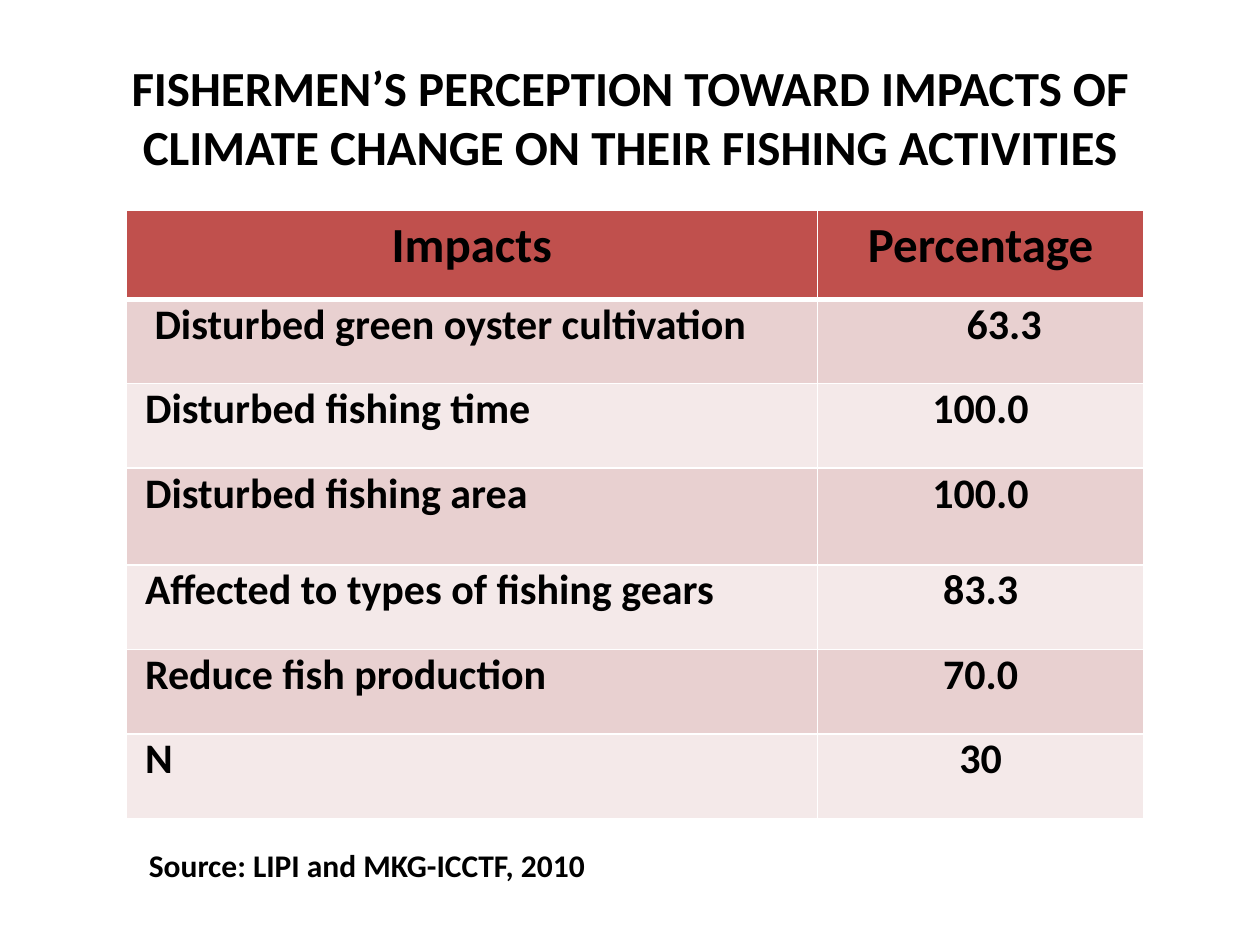
from lxml import etree
from pptx import Presentation
from pptx import util as u
from pptx.dml.color import RGBColor
from pptx.enum import text
from pptx.oxml import ns

Pt = u.Pt
BLACK, WHITE, RED = "000000", "FFFFFF", "C0504D"
BANDS = ["E8D0D0", "F4E9E9"]
LEFT, CENTER = text.PP_ALIGN.LEFT, text.PP_ALIGN.CENTER


def write(frame, words, size, alignment):
    frame.text = words
    paragraph = frame.paragraphs[0]
    paragraph.alignment = alignment
    font = paragraph.runs[0].font
    for name, value in {"name": "Calibri", "size": Pt(size), "bold": True}.items():
        setattr(font, name, value)
    font.color.rgb = RGBColor.from_string(BLACK)


def add_border(cell, side, width):
    """Draw one white cell border; call before the cell's fill is set."""
    properties = cell._tc.get_or_add_tcPr()
    line = etree.SubElement(properties, ns.qn(f"a:ln{side}"), w=str(Pt(width)))
    fill = etree.SubElement(line, ns.qn("a:solidFill"))
    etree.SubElement(fill, ns.qn("a:srgbClr"), val=WHITE)


presentation = Presentation()
presentation.slide_width, presentation.slide_height = Pt(720), Pt(540)
slide = presentation.slides.add_slide(presentation.slide_layouts[5])

# Title
title = slide.shapes.title
title.left, title.top, title.width, title.height = Pt(36), Pt(21.6), Pt(648), Pt(90)
title.text_frame.vertical_anchor = text.MSO_ANCHOR.MIDDLE
write(title.text_frame,
      "FISHERMEN’S PERCEPTION TOWARD IMPACTS OF CLIMATE CHANGE ON THEIR FISHING ACTIVITIES",
      28, CENTER)

# Impacts table
impacts = [
    ("Impacts", "Percentage"),
    ("Disturbed green oyster cultivation", "63.3"),
    ("Disturbed fishing time", "100.0"),
    ("Disturbed fishing area", "100.0"),
    ("Affected to types of fishing gears", "83.3"),
    ("Reduce fish production", "70.0"),
    ("N", "30"),
]
column_widths = [395.2, 186.4]
row_heights = [51, 48.3, 48.3, 55.4, 48.3, 48.3, 48.3]
indents = {(1, 0): 16.3, (1, 1): 27}

table = slide.shapes.add_table(len(impacts), 2, Pt(72), Pt(120),
                               Pt(sum(column_widths)), Pt(sum(row_heights))).table
for column, width in zip(table.columns, column_widths):
    column.width = Pt(width)
for row, height in zip(table.rows, row_heights):
    row.height = Pt(height)

for r, row in enumerate(impacts):
    for c, words in enumerate(row):
        cell = table.cell(r, c)
        header = r == 0
        write(cell.text_frame, words, 28 if header else 24,
              CENTER if header or c == 1 else LEFT)
        if not header:
            cell.margin_left = Pt(indents.get((r, c), 10.9 if c == 0 else 0))
            cell.margin_top = cell.margin_right = cell.margin_bottom = 0
        for side, width in {"L": 1, "R": 1, "T": 3 if r == 1 else 1,
                            "B": 3 if header else 1}.items():
            add_border(cell, side, width)
        cell.fill.solid()
        cell.fill.fore_color.rgb = RGBColor.from_string(
            RED if header else BANDS[(r - 1) % 2])

# Source note
source = slide.shapes.add_textbox(Pt(78), Pt(480), Pt(396), Pt(29))
source.text_frame.word_wrap = True
write(source.text_frame, "Source: LIPI and MKG-ICCTF, 2010", 18, LEFT)

presentation.save("out.pptx")
